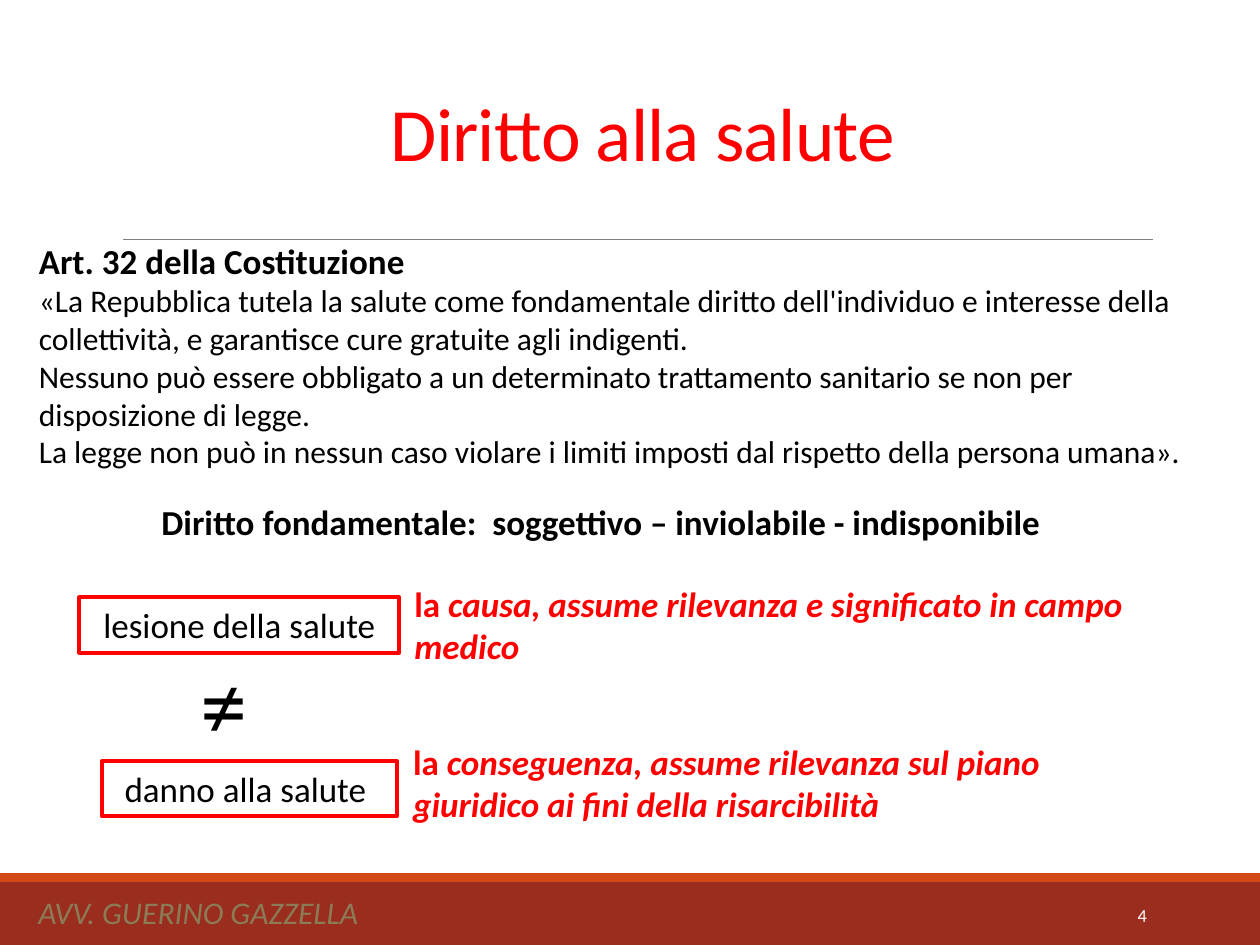
from dataclasses import dataclass

from lxml import etree
from pptx import Presentation
from pptx.dml.color import RGBColor
from pptx.enum.shapes import MSO_CONNECTOR, MSO_SHAPE
from pptx.enum.text import MSO_ANCHOR, PP_ALIGN
from pptx.oxml.ns import qn
from pptx.util import Inches, Pt

STRAIGHT = MSO_CONNECTOR.STRAIGHT
RECTANGLE = MSO_SHAPE.RECTANGLE
TOP, MIDDLE, BOTTOM = MSO_ANCHOR.TOP, MSO_ANCHOR.MIDDLE, MSO_ANCHOR.BOTTOM
LEFT, CENTER, RIGHT = PP_ALIGN.LEFT, PP_ALIGN.CENTER, PP_ALIGN.RIGHT


@dataclass(frozen=True)
class Theme:
    font: str = "Calibri"
    text: str = "000000"
    accent: str = "FF0000"
    light: str = "FFFFFF"
    band: str = "9B2D1F"
    stripe: str = "D34817"
    rule: str = "808080"
    footer: str = "8B7B57"
    title_size: float = 43
    symbol_size: float = 54
    heading_size: float = 20
    body_size: float = 18
    number_size: float = 10.5


THEME = Theme()


def add_run(paragraph, text, size=THEME.heading_size, color=THEME.text,
            bold=False, italic=False, spacing=None):
    run = paragraph.add_run()
    run.text = text
    run.font.name = THEME.font
    run.font.size = Pt(size)
    run.font.color.rgb = RGBColor.from_string(color)
    run.font.bold = bold
    run.font.italic = italic
    if spacing is not None:
        run._r.get_or_add_rPr().set("spc", str(round(spacing * 100)))


class SlideBuilder:
    def __init__(self, slide, theme):
        self.slide = slide
        self.theme = theme

    def fill_text(self, shape, paragraphs, align=LEFT, anchor=TOP, line_spacing=None):
        frame = shape.text_frame
        frame.word_wrap = True
        frame.vertical_anchor = anchor
        for index, runs in enumerate(paragraphs):
            paragraph = frame.add_paragraph() if index else frame.paragraphs[0]
            paragraph.alignment = align
            if line_spacing:
                paragraph.line_spacing = line_spacing
            for text, style in runs:
                add_run(paragraph, text, **style)

    def text(self, bounds, paragraphs, **layout):
        box = self.slide.shapes.add_textbox(*map(Inches, bounds))
        self.fill_text(box, paragraphs, **layout)

    def rectangle(self, bounds):
        shape = self.slide.shapes.add_shape(RECTANGLE, *map(Inches, bounds))
        shape.shadow.inherit = False
        return shape

    def band(self, bounds, color):
        shape = self.rectangle(bounds)
        shape.fill.solid()
        shape.fill.fore_color.rgb = RGBColor.from_string(color)
        shape.line.fill.background()

    def framed_term(self, bounds, text):
        shape = self.rectangle(bounds)
        shape.fill.background()
        shape.line.color.rgb = RGBColor.from_string(self.theme.accent)
        shape.line.width = Pt(2.25)
        self.fill_text(shape, [[(text, {})]], align=CENTER)

    def explanation(self, bounds, text):
        style = dict(color=self.theme.accent, bold=True)
        self.text(bounds, [[("la ", style), (text, dict(style, italic=True))]])

    def rule(self, left, right, top):
        line = self.slide.shapes.add_connector(
            STRAIGHT, Inches(left), Inches(top), Inches(right), Inches(top))
        line.line.color.rgb = RGBColor.from_string(self.theme.rule)
        line.line.width = Pt(0.5)
        etree.SubElement(line.element.spPr, qn("a:effectLst"))


def main():
    presentation = Presentation()
    presentation.slide_width = Inches(10)
    presentation.slide_height = Inches(7.5)
    slide = presentation.slides.add_slide(presentation.slide_layouts[6])
    builder = SlideBuilder(slide, THEME)

    builder.band((0, 7, 10, 0.5), THEME.band)
    builder.band((0, 6.93, 10, 0.07), THEME.stripe)
    builder.rule(0.98, 9.15, 1.9)

    title_style = dict(size=THEME.title_size, color=THEME.accent, spacing=-0.5)
    builder.text((1, 0.84, 8.2, 0.61), [[("Diritto alla salute", title_style)]],
                 align=CENTER, anchor=BOTTOM, line_spacing=0.85)
    footer_style = dict(size=THEME.body_size, color=THEME.footer, italic=True)
    builder.text((-0.01, 6.98, 3.17, 0.52), [[("AVV. GUERINO GAZZELLA", footer_style)]],
                 align=CENTER, anchor=MIDDLE)
    number_style = dict(size=THEME.number_size, color=THEME.light)
    builder.text((8.12, 7.06, 1.08, 0.4), [[("4", number_style)]],
                 align=RIGHT, anchor=MIDDLE)

    article = [
        "«La Repubblica tutela la salute come fondamentale diritto dell'individuo "
        "e interesse della collettività, e garantisce cure gratuite agli indigenti.",
        "Nessuno può essere obbligato a un determinato trattamento sanitario "
        "se non per disposizione di legge.",
        "La legge non può in nessun caso violare i limiti imposti dal rispetto "
        "della persona umana».",
    ]
    heading = [("Art. 32 della Costituzione", dict(bold=True))]
    body = [[(sentence, dict(size=THEME.body_size))] for sentence in article]
    builder.text((0.21, 1.85, 9.59, 2.26), [heading] + body)
    principle = "Diritto fondamentale:  soggettivo – inviolabile - indisponibile"
    builder.text((0.51, 3.92, 8.52, 0.74), [[(principle, dict(bold=True))]], align=CENTER)

    comparison = [
        ((0.63, 4.74, 2.54, 0.44), "lesione della salute",
         (3.19, 4.57, 5.84, 0.77),
         "causa, assume rilevanza e significato in campo medico"),
        ((0.81, 6.04, 2.34, 0.44), "danno alla salute ",
         (3.18, 5.83, 6.16, 0.77),
         "conseguenza, assume rilevanza sul piano giuridico ai fini della risarcibilità"),
    ]
    for term_bounds, term, meaning_bounds, meaning in comparison:
        builder.framed_term(term_bounds, term)
        builder.explanation(meaning_bounds, meaning)
    builder.text((0.51, 5.07, 2.54, 1.01), [[("≠", dict(size=THEME.symbol_size))]],
                 align=CENTER)

    presentation.save("out.pptx")


if __name__ == "__main__":
    main()
